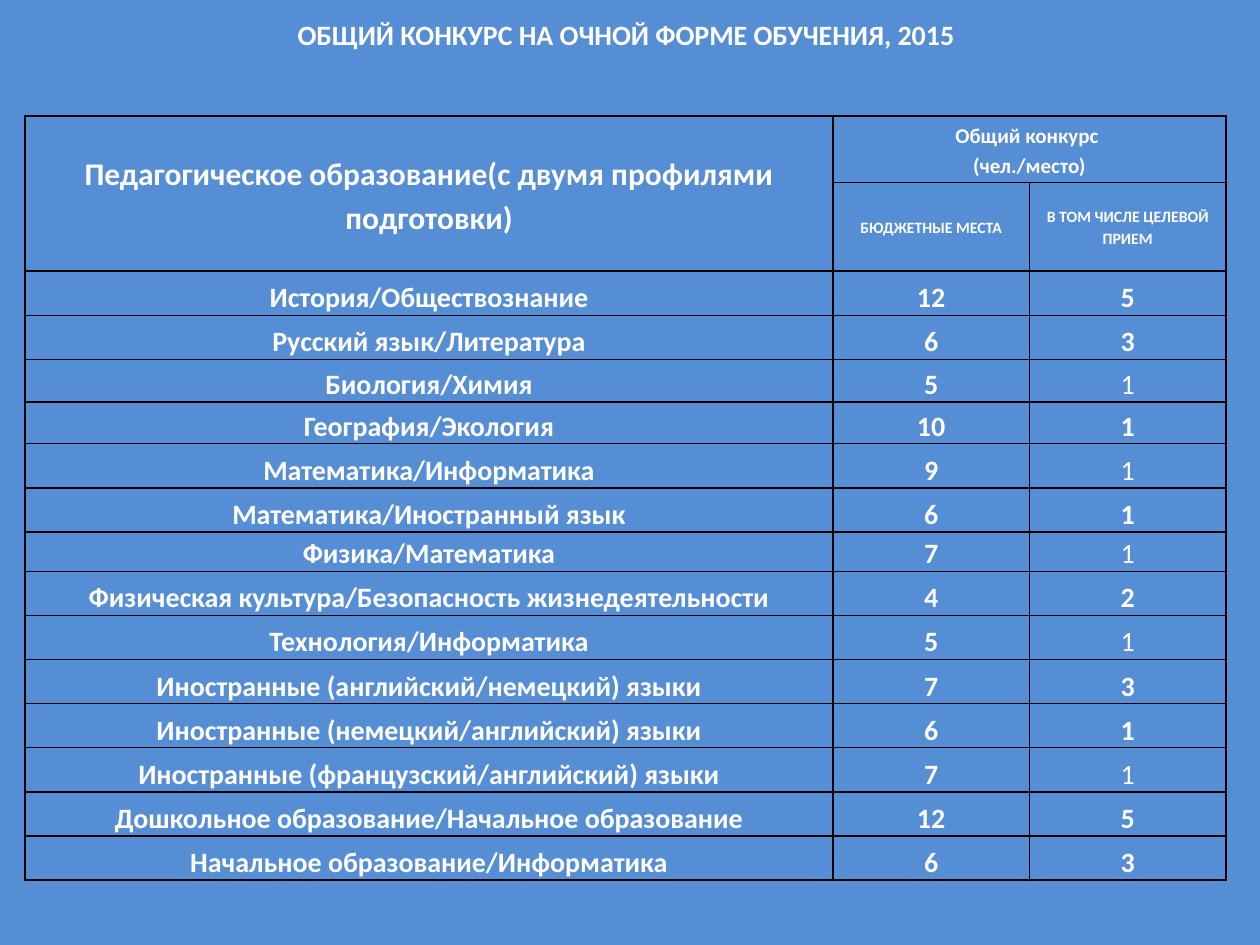
from pptx import Presentation
from pptx.util import Inches, Pt
from pptx.dml.color import RGBColor as RGB
from pptx.enum.text import PP_ALIGN as Align, MSO_ANCHOR as Anchor
from pptx.oxml import parse_xml
from pptx.oxml.ns import nsdecls

COLORS = {"back": "558ED5", "text": "FFFFFF", "line": "000000"}
FONT = "Calibri"
COLS = [6.41, 1.56, 1.56]
HEAD_ROWS = [0.53, 0.56]
ROW = 0.35

# Profile, budget places, targeted places, targeted figure in bold
DATA = [
    ("История/Обществознание", 12, 5, True),
    ("Русский язык/Литература", 6, 3, True),
    ("Биология/Химия", 5, 1, False),
    ("География/Экология", 10, 1, True),
    ("Математика/Информатика", 9, 1, False),
    ("Математика/Иностранный язык", 6, 1, True),
    ("Физика/Математика", 7, 1, False),
    ("Физическая культура/Безопасность жизнедеятельности", 4, 2, True),
    ("Технология/Информатика", 5, 1, False),
    ("Иностранные (английский/немецкий) языки", 7, 3, True),
    ("Иностранные (немецкий/английский) языки", 6, 1, True),
    ("Иностранные (французский/английский) языки", 7, 1, False),
    ("Дошкольное образование/Начальное образование", 12, 5, True),
    ("Начальное образование/Информатика", 6, 3, True),
]
# Rows of the table that are lower than the rest
LOW = {5: 0.34, 6: 0.33, 9: 0.29}


def style(par, size, bold=True):
    par.alignment = Align.CENTER
    font = par.font
    font.name, font.size, font.bold = FONT, Pt(size), bold
    font.color.rgb = RGB.from_string(COLORS["text"])


def border(cell):
    props = cell._tc.get_or_add_tcPr()
    for i, side in enumerate(("lnL", "lnR", "lnT", "lnB")):
        props.insert(i, parse_xml(
            f'<a:{side} {nsdecls("a")} w="{Pt(1)}"><a:solidFill>'
            f'<a:srgbClr val="{COLORS["line"]}"/></a:solidFill></a:{side}>'))


def write(cell, text, size, bold=True, anchor=Anchor.MIDDLE):
    cell.text = text
    cell.vertical_anchor = anchor
    par = cell.text_frame.paragraphs[0]
    par.line_spacing, par.space_after = 1.15, Pt(10)
    style(par, size, bold)


def add_title(slide, box):
    title = slide.shapes.title
    title.left, title.top, title.width, title.height = map(Inches, box)
    frame = title.text_frame
    frame.text = "ОБЩИЙ КОНКУРС НА ОЧНОЙ ФОРМЕ ОБУЧЕНИЯ, 2015"
    frame.vertical_anchor = Anchor.MIDDLE
    style(frame.paragraphs[0], 16)


def add_grid(slide, left, top):
    rows = HEAD_ROWS + [ROW] * len(DATA)
    for r, high in LOW.items():
        rows[r - 1] = high
    box = map(Inches, (left, top, sum(COLS), sum(rows)))
    table = slide.shapes.add_table(len(rows), len(COLS), *box).table
    for col, wide in zip(table.columns, COLS):
        col.width = Inches(wide)
    for row, high in zip(table.rows, rows):
        row.height = Inches(high)

    # Plain cells with thin borders
    for cell in table.iter_cells():
        cell.margin_left = cell.margin_right = Inches(0.05)
        cell.margin_top = cell.margin_bottom = 0
        cell.fill.background()
        border(cell)

    # Two-level header
    table.cell(0, 0).merge(table.cell(1, 0))
    table.cell(0, 1).merge(table.cell(0, 2))
    write(table.cell(0, 0),
          "Педагогическое образование(с двумя профилями подготовки)", 18)
    write(table.cell(0, 1), "Общий конкурс \v(чел./место)", 12)
    write(table.cell(1, 1), "БЮДЖЕТНЫЕ МЕСТА", 9)
    write(table.cell(1, 2), "В ТОМ ЧИСЛЕ ЦЕЛЕВОЙ ПРИЕМ", 9)

    # Profiles and their figures
    for r, (name, budget, target, bold) in enumerate(DATA, len(HEAD_ROWS)):
        for c, value in enumerate((name, budget, target)):
            write(table.cell(r, c), str(value), 16, bold or c < 2,
                  Anchor.BOTTOM)


def main():
    deck = Presentation()
    deck.slide_width, deck.slide_height = Inches(10), Inches(7.5)
    slide = deck.slides.add_slide(deck.slide_layouts[5])
    fill = slide.background.fill
    fill.solid()
    fill.fore_color.rgb = RGB.from_string(COLORS["back"])
    add_title(slide, (0.47, -0.09, 9, 0.72))
    add_grid(slide, 0.2, 0.92)
    deck.save("out.pptx")


if __name__ == "__main__":
    main()
